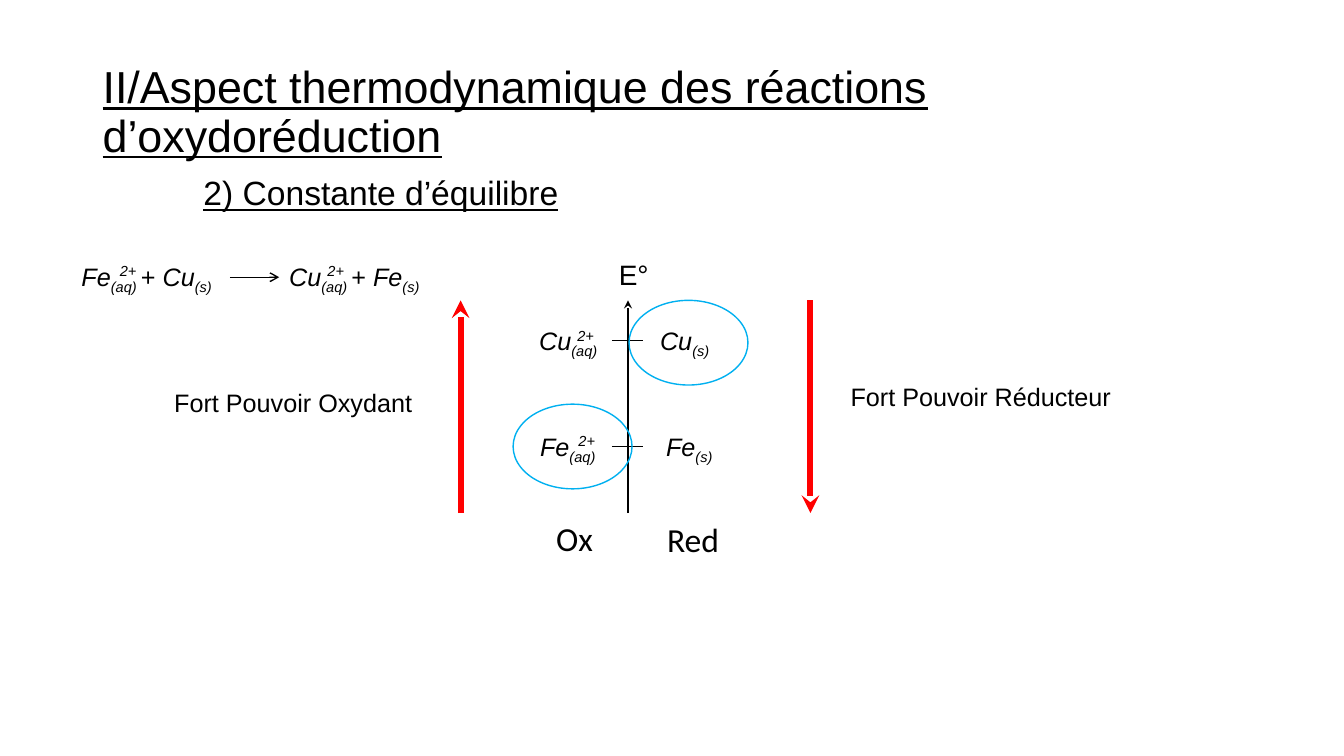
from dataclasses import dataclass

from lxml.etree import SubElement
from pptx import Presentation
from pptx.dml.color import RGBColor as Rgb
from pptx.enum.shapes import MSO_CONNECTOR as Conn, MSO_SHAPE as Form
from pptx.enum.text import MSO_ANCHOR as Anchor
from pptx.oxml.ns import qn
from pptx.util import Inches, Length, Pt

CELL = 0.1  # side of a grid square, in inches
COLS, ROWS = 133.33, 75
BLACK, RED, BLUE = "000000", "FF0000", "00B0F0"

AXIS, TOP, FOOT = 62.3, 29.8, 50.9
HIGH, LOW = 33.8, 44.3  # rows of the two couples
SUB, SUP = -25, 30


@dataclass
class Run:
    text: str
    base: int = 0
    italic: bool = True


@dataclass
class Label:
    text: str
    col: float
    row: float
    wide: float
    size: int = 18
    font: str = "Arial"


@dataclass
class Line:
    start: tuple[float, float]
    end: tuple[float, float]
    width: float
    color: str = BLACK
    head: str = ""


@dataclass
class Group:
    """Chemical formulas, with the ion's charge set above its state."""
    runs: list[Run]
    col: float
    row: float
    ion: bool = True


def grid(count: float) -> Length:
    return Inches(count * CELL)


def paint(code: str) -> Rgb:
    return Rgb.from_string(code)


def write(slide, text: str | list[Run], col: float, row: float, wide: float,
          high: float = 4, *, size: int = 18, font: str = "Arial",
          color: str = BLACK, under: bool = False, middle: bool = False,
          space: float = 1) -> None:
    box = slide.shapes.add_textbox(grid(col), grid(row), grid(wide), grid(high))
    frame = box.text_frame
    frame.word_wrap = True
    frame.vertical_anchor = Anchor.MIDDLE if middle else Anchor.TOP
    par = frame.paragraphs[0]
    par.line_spacing = space
    runs = [Run(text, italic=False)] if isinstance(text, str) else text
    for part in runs:
        run = par.add_run()
        run.text = part.text
        face = run.font
        face.name, face.size = font, Pt(size)
        face.italic, face.underline = part.italic, under
        face.color.rgb = paint(color)
        if part.base:
            run._r.get_or_add_rPr().set("baseline", str(part.base * 1000))


def draw(slide, line: Line) -> None:
    ends = [grid(n) for n in (*line.start, *line.end)]
    link = slide.shapes.add_connector(Conn.STRAIGHT, *ends)
    link.line.color.rgb = paint(line.color)
    link.line.width = Pt(line.width)
    if line.head:
        SubElement(link.line._get_or_add_ln(), qn("a:tailEnd"), type=line.head)
    SubElement(link._element.spPr, qn("a:effectLst"))


def ring(slide, col: float, row: float) -> None:
    oval = slide.shapes.add_shape(Form.OVAL, grid(col), grid(row),
                                  grid(11.8), grid(8.4))
    oval.shadow.inherit = False
    oval.fill.background()
    oval.line.color.rgb = paint(BLUE)
    oval.line.width = Pt(1)


def react(slide, group: Group) -> None:
    write(slide, group.runs, group.col, group.row, 20)
    if group.ion:
        write(slide, [Run("2+", SUP)], group.col + 3.8, group.row - 0.2, 6.4)


def atom(name: str, state: str) -> list[Run]:
    return [Run(name), Run(f"({state})", SUB)]


def side(ion: str, metal: str) -> list[Run]:
    """One side of the equation."""
    return [*atom(ion, "aq"), Run(" ", SUB), Run("+ ", italic=False),
            *atom(metal, "s")]


LINES = [
    Line((AXIS, FOOT), (AXIS, TOP), 1.25, head="stealth"),
    *(Line((60.7, row), (63.8, row), 0.5) for row in (HIGH, LOW)),
    Line((45.7, FOOT), (45.7, TOP), 4.25, RED, "stealth"),
    Line((80.4, TOP), (80.4, FOOT), 4.25, RED, "stealth"),
    Line((22.8, 27.5), (27.7, 27.5), 1, head="arrow"),
]
LABELS = [
    Label("Fort Pouvoir Réducteur", 83.4, 37.3, 34.6),
    Label("Fort Pouvoir Oxydant", 16.3, 37.9, 34.6),
    Label("Red", 65.2, 51, 11, 24, "Calibri"),
    Label("Ox", 54.2, 50.9, 11, 24, "Calibri"),
    Label("E°", 60.4, 25.1, 12.8, 20),
]
GROUPS = [
    Group(side("Fe", "Cu"), 7.1, 25.4),
    Group(side("Cu", "Fe"), 27.7, 25.4),
    Group(atom("Cu", "aq"), 52.5, HIGH - 2),
    Group(atom("Cu", "s"), 64.5, HIGH - 2, ion=False),
    Group(atom("Fe", "aq"), 52.6, LOW - 2),
    Group(atom("Fe", "s"), 65.1, LOW - 2, ion=False),
]


def main() -> None:
    deck = Presentation()
    deck.slide_width, deck.slide_height = grid(COLS), grid(ROWS)
    slide = deck.slides.add_slide(deck.slide_layouts[6])
    for line in LINES:
        draw(slide, line)
    write(slide, "II/Aspect thermodynamique des réactions d’oxydoréduction",
          9.2, 4, 115, 14.5, size=32, under=True, middle=True, space=0.9)
    write(slide, "2) Constante d’équilibre", 19.2, 12.1, 105, 14.5,
          size=24, under=True, middle=True, space=0.9)
    for label in LABELS:
        write(slide, label.text, label.col, label.row, label.wide,
              size=label.size, font=label.font)
    for group in GROUPS:
        react(slide, group)
    ring(slide, 50.9, LOW - 4.2)
    ring(slide, 62.4, TOP)
    deck.save("out.pptx")


if __name__ == "__main__":
    main()
